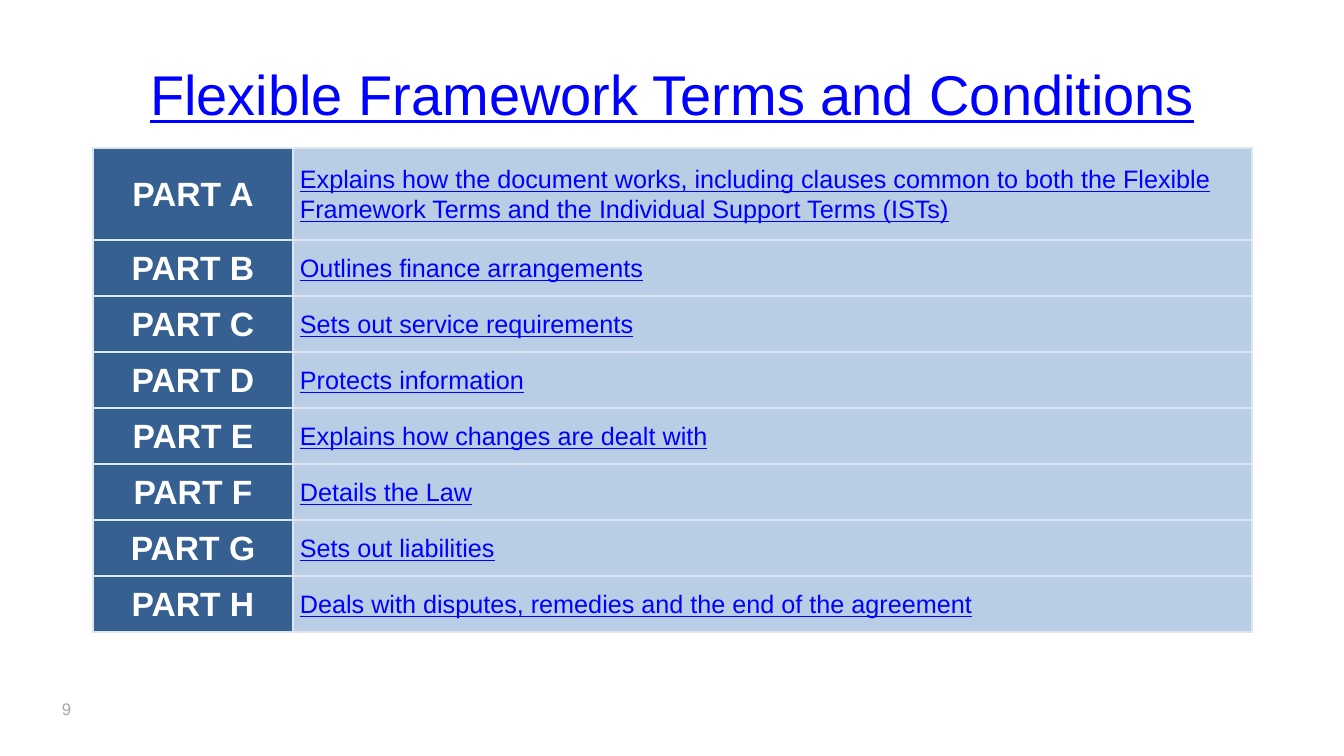
from lxml import etree
from pptx import Presentation
from pptx import util as u
from pptx.dml.color import RGBColor
from pptx.enum import text as t
from pptx.oxml.ns import qn

PARTS = [
    "Explains how the document works, including clauses common to both the "
    "Flexible Framework Terms and the Individual Support Terms (ISTs)",
    "Outlines finance arrangements",
    "Sets out service requirements",
    "Protects information",
    "Explains how changes are dealt with",
    "Details the Law",
    "Sets out liabilities",
    "Deals with disputes, remedies and the end of the agreement",
]
LINK, NAVY, PALE, EDGE = "0000FF", "376092", "B9CDE5", "DCE6F2"
WHITE, GREY = "FFFFFF", "A6A6A6"


def px(n):
    return u.Emu(round(n * 914400 / 100.8))


def color(code):
    return RGBColor.from_string(code)


def write(frame, words, size, ink, bold=False, under=False, center=False, gap=None):
    para = frame.paragraphs[0]
    para.alignment = t.PP_ALIGN.CENTER if center else t.PP_ALIGN.LEFT
    para.line_spacing = gap
    run = para.add_run()
    run.text = words
    font = run.font
    font.name, font.size = "Arial", u.Pt(size)
    font.bold, font.underline = bold, under
    font.color.rgb = color(ink)


class Deck:
    def __init__(self, wide, high):
        self.prs = Presentation()
        self.prs.slide_width, self.prs.slide_height = px(wide), px(high)
        self.slide = self.prs.slides.add_slide(self.prs.slide_layouts[6])

    def label(self, x, y, w, h, words, middle=False, **style):
        frame = self.slide.shapes.add_textbox(px(x), px(y), px(w), px(h)).text_frame
        frame.word_wrap = True
        frame.vertical_anchor = t.MSO_ANCHOR.MIDDLE if middle else t.MSO_ANCHOR.TOP
        write(frame, words, **style)

    def table(self, x, y, cols, rows):
        grid = self.slide.shapes.add_table(
            len(rows), len(cols), px(x), px(y), px(sum(cols)), px(sum(rows))).table
        grid.first_row = grid.horz_banding = False
        for col, w in zip(grid.columns, cols):
            col.width = px(w)
        for row, h in zip(grid.rows, rows):
            row.height = px(h)
        return grid

    def cell(self, cell, words, fill, **style):
        cell.margin_left = cell.margin_right = px(7)
        cell.margin_top = cell.margin_bottom = 0
        cell.vertical_anchor = t.MSO_ANCHOR.MIDDLE
        cell.fill.solid()
        cell.fill.fore_color.rgb = color(fill)
        write(cell.text_frame, words, gap=1.06, **style)
        # Borders come before the fill in the cell properties
        props = cell._tc.get_or_add_tcPr()
        for i, side in enumerate("LRTB"):
            line = etree.Element(qn("a:ln" + side), w=str(u.Pt(1)))
            solid = etree.SubElement(line, qn("a:solidFill"))
            etree.SubElement(solid, qn("a:srgbClr"), val=EDGE)
            props.insert(i, line)


def main():
    deck = Deck(1344, 756)

    # Page number
    deck.label(52, 694, 221, 30, "9", size=12, ink=GREY)

    # Title
    deck.label(67, 30, 1210, 126, "Flexible Framework Terms and Conditions",
               middle=True, size=40, ink=LINK, under=True, center=True)

    # Table of parts
    grid = deck.table(93, 148, [200, 959], [92] + [56] * (len(PARTS) - 1))
    for i, (mark, words) in enumerate(zip("ABCDEFGH", PARTS)):
        deck.cell(grid.cell(i, 0), f"PART {mark}", NAVY,
                  size=24, ink=WHITE, bold=True, center=True)
        deck.cell(grid.cell(i, 1), words, PALE, size=18, ink=LINK, under=True)

    deck.prs.save("out.pptx")


if __name__ == "__main__":
    main()
